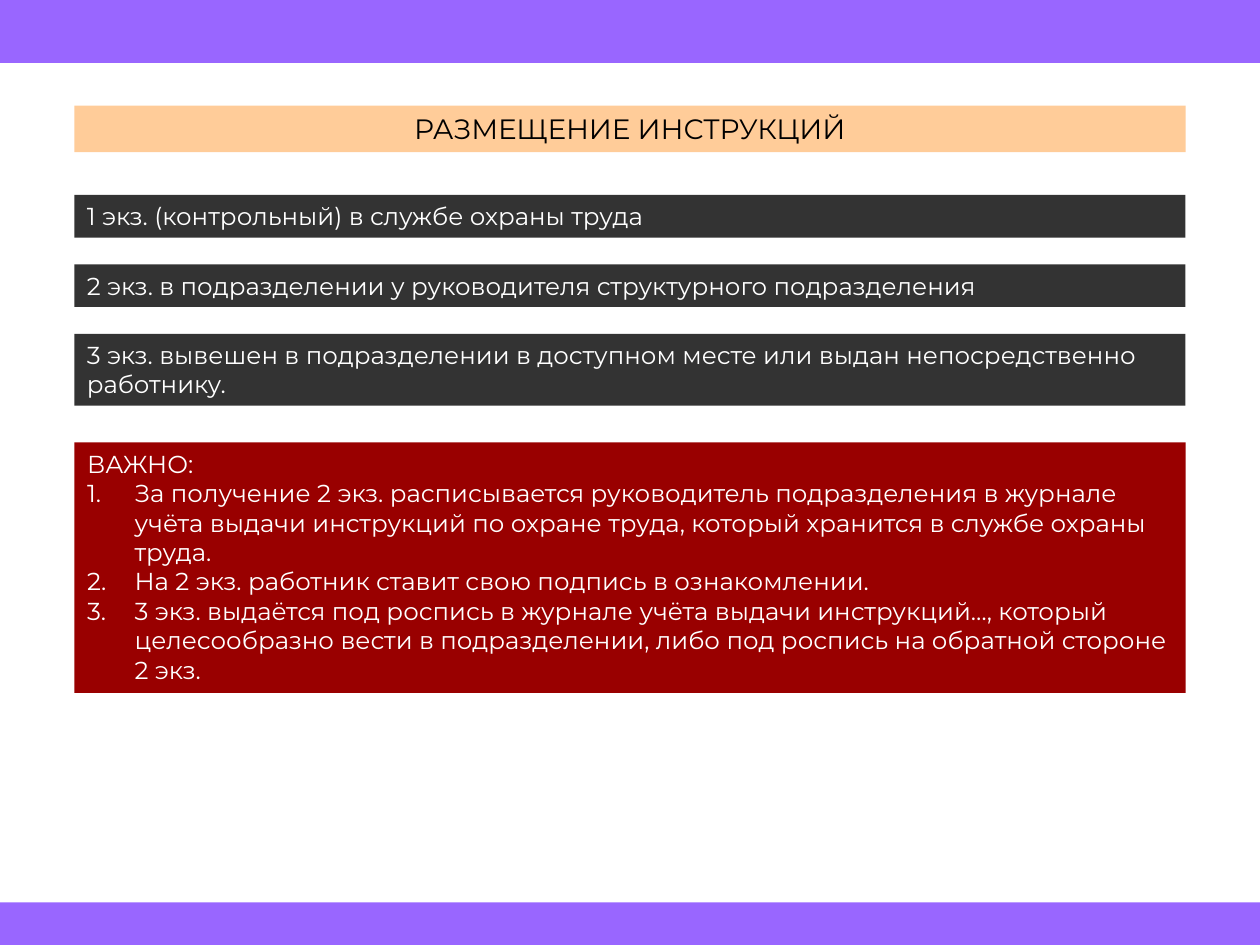
import pptx
import pptx.dml.color
import pptx.enum.shapes
import pptx.enum.text
import pptx.oxml.ns
import pptx.util
from lxml import etree
from pptx.util import Cm

FONT = "Montserrat"
SLIDE_WIDTH, SLIDE_HEIGHT = 25.4, 19.05
LEFT, WIDTH = 1.5, 22.4
PURPLE, PEACH, CHARCOAL, DARK_RED = "9966FF", "FFCC99", "333333", "990000"
WHITE, BLACK = "FFFFFF", "000000"

COPIES = [
    "1 экз. (контрольный) в службе охраны труда",
    "2 экз. в подразделении у руководителя структурного подразделения",
    "3 экз. вывешен в подразделении в доступном месте или выдан непосредственно "
    "работнику.",
]
RULES = [
    "За получение 2 экз. расписывается руководитель подразделения в журнале учёта "
    "выдачи инструкций по охране труда, который хранится в службе охраны труда.",
    "На 2 экз. работник ставит свою подпись в ознакомлении.",
    "3 экз. выдаётся под роспись в журнале учёта выдачи инструкций…, который "
    "целесообразно вести в подразделении, либо под роспись на обратной стороне 2 экз.",
]


def color(value):
    return pptx.dml.color.RGBColor.from_string(value)


def fill_box(shape, box, fill):
    shape.left, shape.top, shape.width, shape.height = (Cm(length) for length in box)
    shape.fill.solid()
    shape.fill.fore_color.rgb = color(fill)
    shape.line.fill.background()


def add_rectangle(slide, box, fill):
    shape = slide.shapes.add_shape(
        pptx.enum.shapes.MSO_SHAPE.RECTANGLE, *(Cm(length) for length in box))
    shape.shadow.inherit = False
    fill_box(shape, box, fill)
    return shape


def set_bullet(paragraph, numbered):
    properties = paragraph._p.get_or_add_pPr()
    indent = Cm(0.96) if numbered else 0
    properties.set("marL", str(indent))
    properties.set("indent", str(-indent))
    tag = "a:buAutoNum" if numbered else "a:buNone"
    bullet = etree.SubElement(properties, pptx.oxml.ns.qn(tag))
    if numbered:
        bullet.set("type", "arabicPeriod")


def write(shape, lines, size=14, ink=WHITE, align="LEFT", numbered_from=None):
    """Write one paragraph a line; lines from numbered_from on are numbered."""
    frame = shape.text_frame
    frame.word_wrap = True
    frame.auto_size = pptx.enum.text.MSO_AUTO_SIZE.NONE
    frame.vertical_anchor = pptx.enum.text.MSO_ANCHOR.TOP
    for index, line in enumerate(lines):
        paragraph = frame.add_paragraph() if index else frame.paragraphs[0]
        set_bullet(paragraph, numbered_from is not None and index >= numbered_from)
        paragraph.alignment = getattr(pptx.enum.text.PP_ALIGN, align)
        paragraph.space_before = pptx.util.Pt(0)
        run = paragraph.add_run()
        run.text = line
        run.font.name = FONT
        run.font.size = pptx.util.Pt(size)
        run.font.color.rgb = color(ink)


def add_bands(slide):
    top_height, bottom_height = 1.27, 0.86
    add_rectangle(slide, (0, 0, SLIDE_WIDTH, top_height), PURPLE)
    add_rectangle(
        slide, (0, SLIDE_HEIGHT - bottom_height, SLIDE_WIDTH, bottom_height), PURPLE)


def place_title(slide, box):
    title = slide.shapes.title
    fill_box(title, box, PEACH)
    write(title, ["РАЗМЕЩЕНИЕ ИНСТРУКЦИЙ"], size=16, ink=BLACK, align="CENTER")


def add_copies(slide, box):
    left, top, width, height = box
    pitch, line_height = 1.4, 0.86
    for index, text in enumerate(COPIES):
        offset = index * pitch
        # The last bar fills the rest of the region for its second line
        bar_height = height - offset if text == COPIES[-1] else line_height
        bar = add_rectangle(slide, (left, top + offset, width, bar_height), CHARCOAL)
        write(bar, [text])


def place_rules(slide, box):
    body = slide.placeholders[1]
    fill_box(body, box, DARK_RED)
    write(body, ["ВАЖНО:"] + RULES, numbered_from=1)
    # Read the rules after the bars above them
    body.element.getparent().append(body.element)


def main():
    presentation = pptx.Presentation()
    presentation.slide_width = Cm(SLIDE_WIDTH)
    presentation.slide_height = Cm(SLIDE_HEIGHT)
    slide = presentation.slides.add_slide(presentation.slide_layouts[1])
    add_bands(slide)
    place_title(slide, (LEFT, 2.13, WIDTH, 0.94))
    add_copies(slide, (LEFT, 3.93, WIDTH, 4.25))
    place_rules(slide, (LEFT, 8.92, WIDTH, 5.05))
    presentation.save("out.pptx")


if __name__ == "__main__":
    main()
